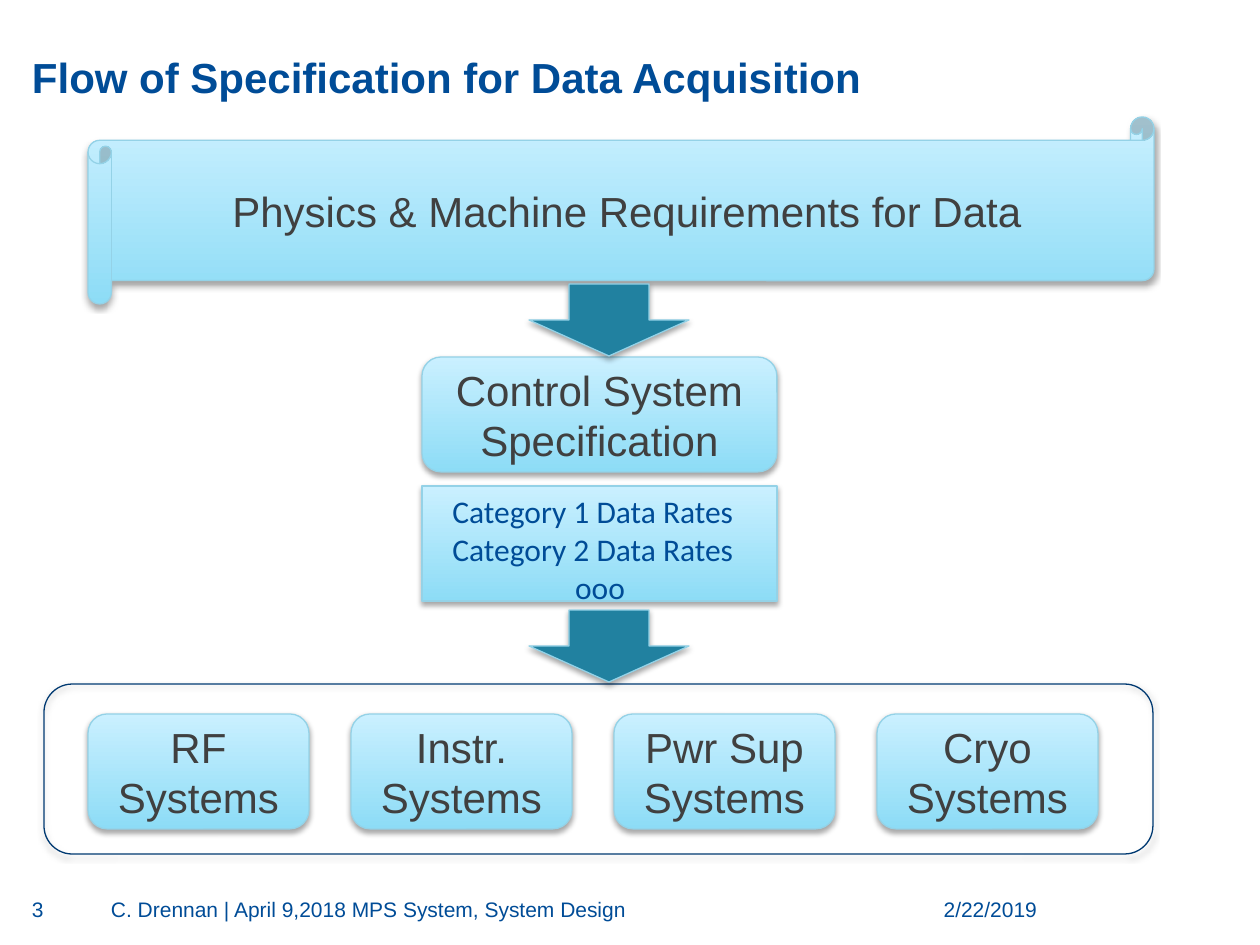
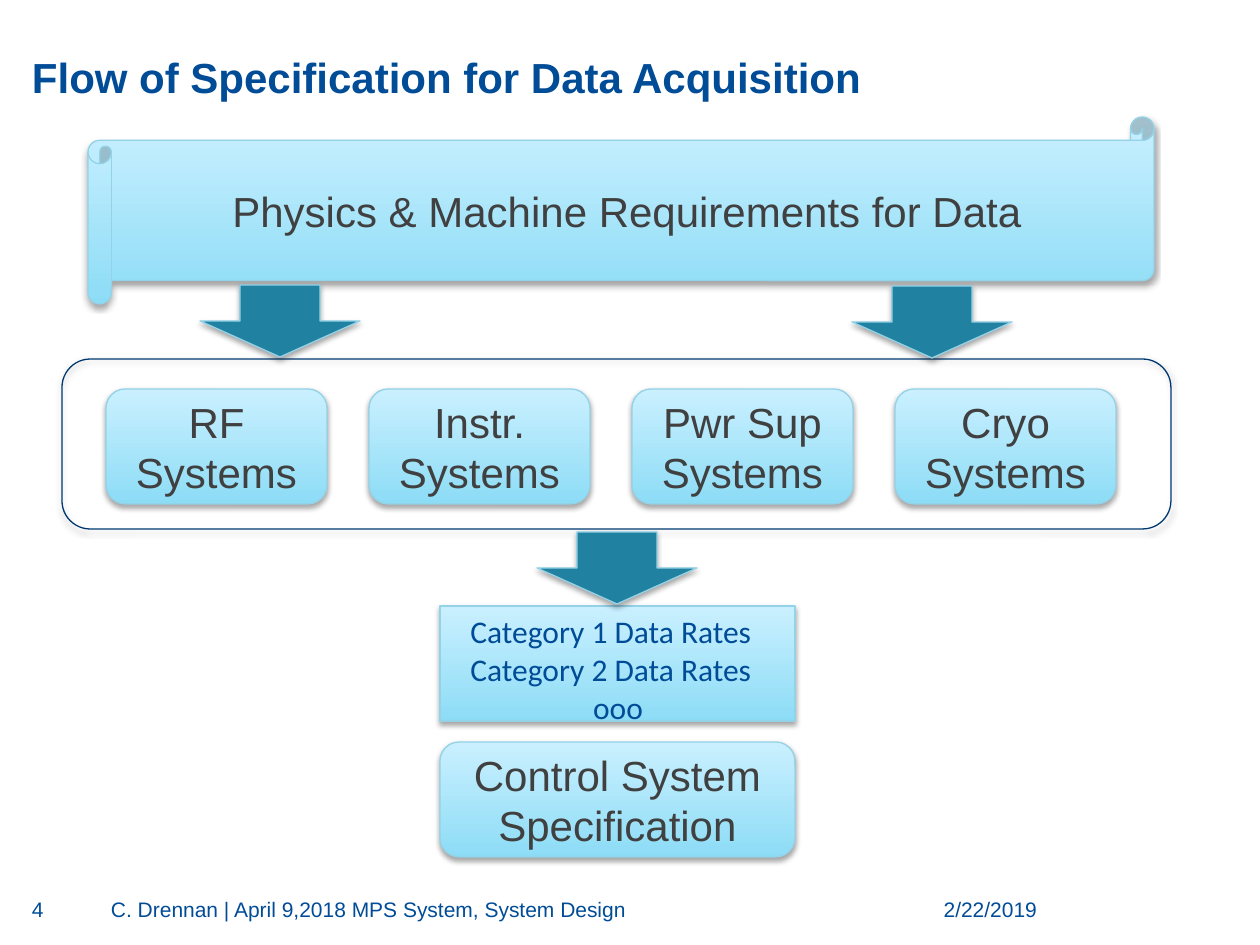
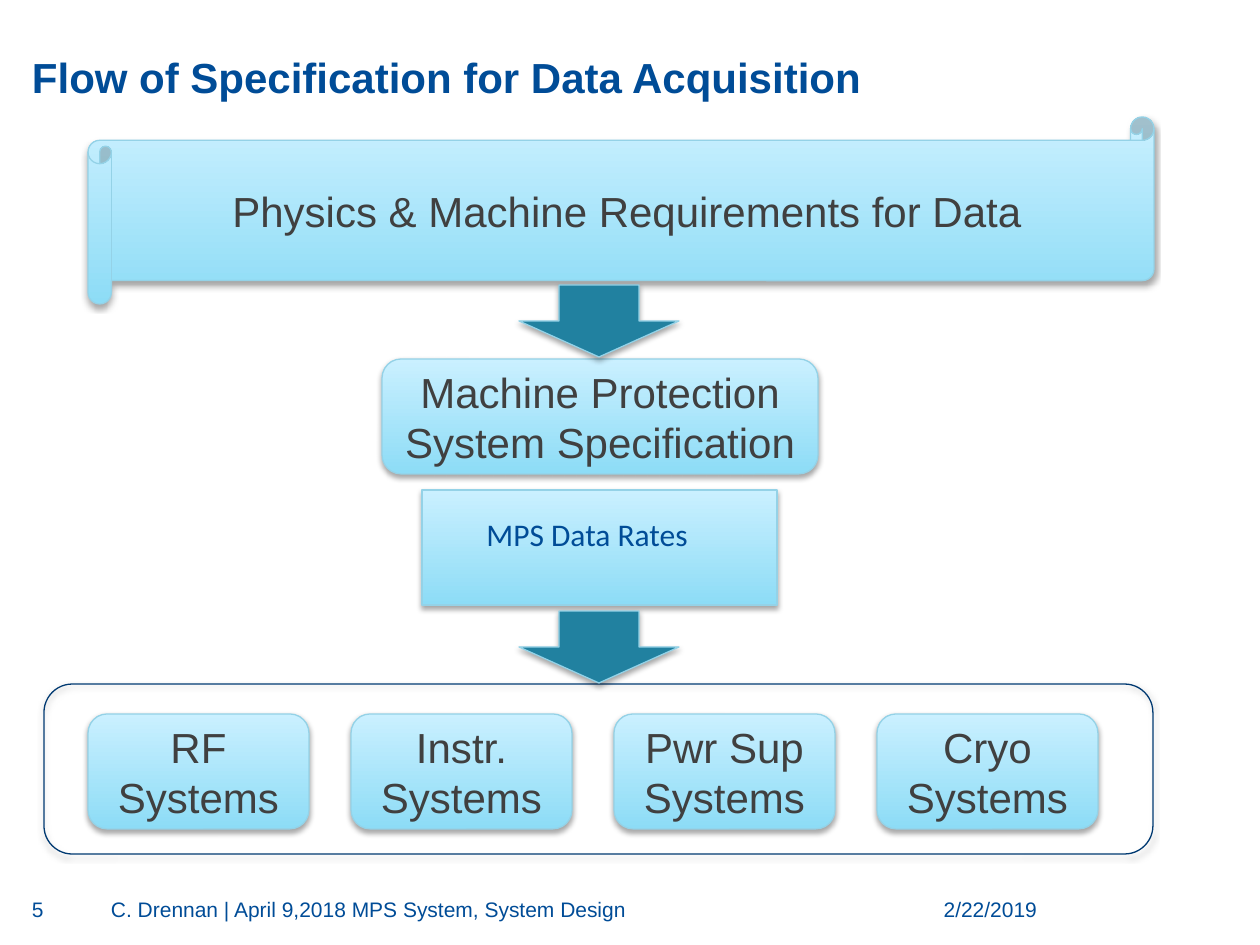
import lxml.etree
import pptx
import pptx.dml.color
import pptx.enum.shapes
import pptx.enum.text
import pptx.oxml.ns
import pptx.util

RGB = pptx.dml.color.RGBColor
KIND = pptx.enum.shapes.MSO_SHAPE
ALIGN = pptx.enum.text.PP_ALIGN
ANCHOR = pptx.enum.text.MSO_ANCHOR

# Shared look
SCALE = 914400 / 126  # EMU in one px
NAVY = RGB(0x00, 0x4C, 0x97)
FRAME = RGB(0x00, 0x39, 0x71)
GREY = RGB(0x40, 0x40, 0x40)
SKY = RGB(0x8D, 0xDC, 0xF6)
PALE = RGB(0xCA, 0xF0, 0xFF)
EDGE = RGB(0x94, 0xD2, 0xE7)
TEAL = RGB(0x21, 0x81, 0xA0)

TITLE = "Flow of Specification for Data Acquisition"
CREDIT = "C. Drennan | April 9,2018 MPS System, System Design"
DATE = "2/22/2019"
NEEDS = "Physics & Machine Requirements for Data"
CONTROL = "Control System Specification"
SYSTEMS = ["RF Systems", "Instr. Systems", "Pwr Sup Systems", "Cryo Systems"]
RATES = ["Category 1 Data Rates", "Category 2 Data Rates", "ooo"]

BOX_W, BOX_H = 355, 115
CHIP_W, CHIP_STEP = 221, 263


def emu(*sizes):
    return [round(size * SCALE) for size in sizes]


def style(para, size, color, name="Arial", align=ALIGN.LEFT, bold=False):
    para.alignment = align
    font = para.font
    font.size, font.name, font.bold = pptx.util.Pt(size), name, bold
    font.color.rgb = color


def shade(shape):
    """Give the shape a soft shadow just below it."""
    shape.shadow.inherit = False
    effects = shape._element.spPr.find(pptx.oxml.ns.qn("a:effectLst"))
    outer = lxml.etree.SubElement(
        effects, pptx.oxml.ns.qn("a:outerShdw"), blurRad="40000",
        dist="23000", dir="5400000", rotWithShape="0")
    black = lxml.etree.SubElement(
        outer, pptx.oxml.ns.qn("a:srgbClr"), val="000000")
    lxml.etree.SubElement(black, pptx.oxml.ns.qn("a:alpha"), val="35000")


def add_shape(slide, kind, x, y, w, h, edge=EDGE):
    shape = slide.shapes.add_shape(kind, *emu(x, y, w, h))
    shape.line.color.rgb = edge
    shape.line.width = pptx.util.Pt(0.75)
    shade(shape)
    return shape


def add_panel(slide, kind, x, y, w, h, text=None):
    """Add a shape with the blue gradient, pale at the top."""
    panel = add_shape(slide, kind, x, y, w, h)
    panel.fill.gradient()
    panel.fill.gradient_angle = 90
    for stop, color in zip(panel.fill.gradient_stops, (SKY, PALE)):
        stop.color.rgb = color
    if text:
        frame = panel.text_frame
        frame.text = text
        frame.word_wrap = True
        frame.vertical_anchor = ANCHOR.MIDDLE
        style(frame.paragraphs[0], 24, GREY, align=ALIGN.CENTER)


def add_arrow(slide, x, y):
    arrow = add_shape(slide, KIND.DOWN_ARROW, x, y, 160, 72)
    arrow.fill.solid()
    arrow.fill.fore_color.rgb = TEAL


def add_text(slide, x, y, w, h, lines):
    box = slide.shapes.add_textbox(*emu(x, y, w, h))
    box.text_frame.word_wrap = True
    box.text_frame.text = "\n".join(lines)
    return box.text_frame


def no_inset(frame):
    frame.margin_left = frame.margin_right = 0
    frame.margin_top = frame.margin_bottom = 0


def add_foot(slide, x, w, text, align=ALIGN.LEFT):
    frame = add_text(slide, x, 897, w, 33, [text])
    no_inset(frame)
    style(frame.paragraphs[0], 12, NAVY, align=align)


def add_rates(slide, x, y, lines, dx=18, dy=0, h=127):
    """Add the data rate box, its text set in by dx and dy."""
    add_panel(slide, KIND.RECTANGLE, x, y, BOX_W, BOX_H)
    frame = add_text(slide, x + dx, y + dy, 320, h, lines)
    for para in frame.paragraphs:
        align = ALIGN.CENTER if para.text == "ooo" else ALIGN.LEFT
        style(para, 18, NAVY, "Calibri", align)


def add_spec(slide, x, y, text=CONTROL, w=BOX_W):
    add_panel(slide, KIND.ROUNDED_RECTANGLE, x, y, w, BOX_H, text)


def add_systems(slide, x, y):
    """Add the row of systems and the frame around it."""
    for i, name in enumerate(SYSTEMS):
        add_spec(slide, x + 44 + i * CHIP_STEP, y + 30, name, CHIP_W)
    frame = add_shape(
        slide, KIND.ROUNDED_RECTANGLE, x, y, 1109, 170, FRAME)
    frame.fill.background()


def add_slide(deck, number):
    """Start a slide with its title, footer and scroll."""
    slide = deck.slides.add_slide(deck.slide_layouts[5])
    title = slide.shapes.title
    title.left, title.top, title.width, title.height = emu(32, 14, 1197, 88)
    frame = title.text_frame
    frame.text = TITLE
    frame.vertical_anchor = ANCHOR.BOTTOM
    no_inset(frame)
    style(frame.paragraphs[0], 24, NAVY, bold=True)

    add_foot(slide, 888, 149, DATE, ALIGN.RIGHT)
    add_foot(slide, 111, 741, CREDIT)
    add_foot(slide, 32, 62, str(number))
    add_panel(slide, KIND.HORIZONTAL_SCROLL, 88, 117, 1066, 187, NEEDS)
    return slide


def main():
    deck = pptx.Presentation()
    deck.slide_width, deck.slide_height = emu(1260, 945)

    # Control system sets the rates
    slide = add_slide(deck, 3)
    add_systems(slide, 44, 684)
    add_rates(slide, 422, 486, RATES)
    add_spec(slide, 422, 357)
    add_arrow(slide, 529, 610)
    add_arrow(slide, 529, 284)

    # Systems set the rates
    slide = add_slide(deck, 4)
    add_rates(slide, 440, 606, RATES)
    add_spec(slide, 440, 742)
    add_systems(slide, 62, 359)
    add_arrow(slide, 537, 532)
    add_arrow(slide, 852, 286)
    add_arrow(slide, 200, 285)

    # Machine protection sets the rates
    slide = add_slide(deck, 5)
    add_systems(slide, 44, 684)
    add_spec(slide, 382, 359, "Machine Protection System Specification", 436)
    add_rates(slide, 422, 490, ["MPS Data Rates"], 52, 19, 50)
    add_arrow(slide, 519, 611)
    add_arrow(slide, 519, 285)

    deck.save("out.pptx")


if __name__ == "__main__":
    main()
